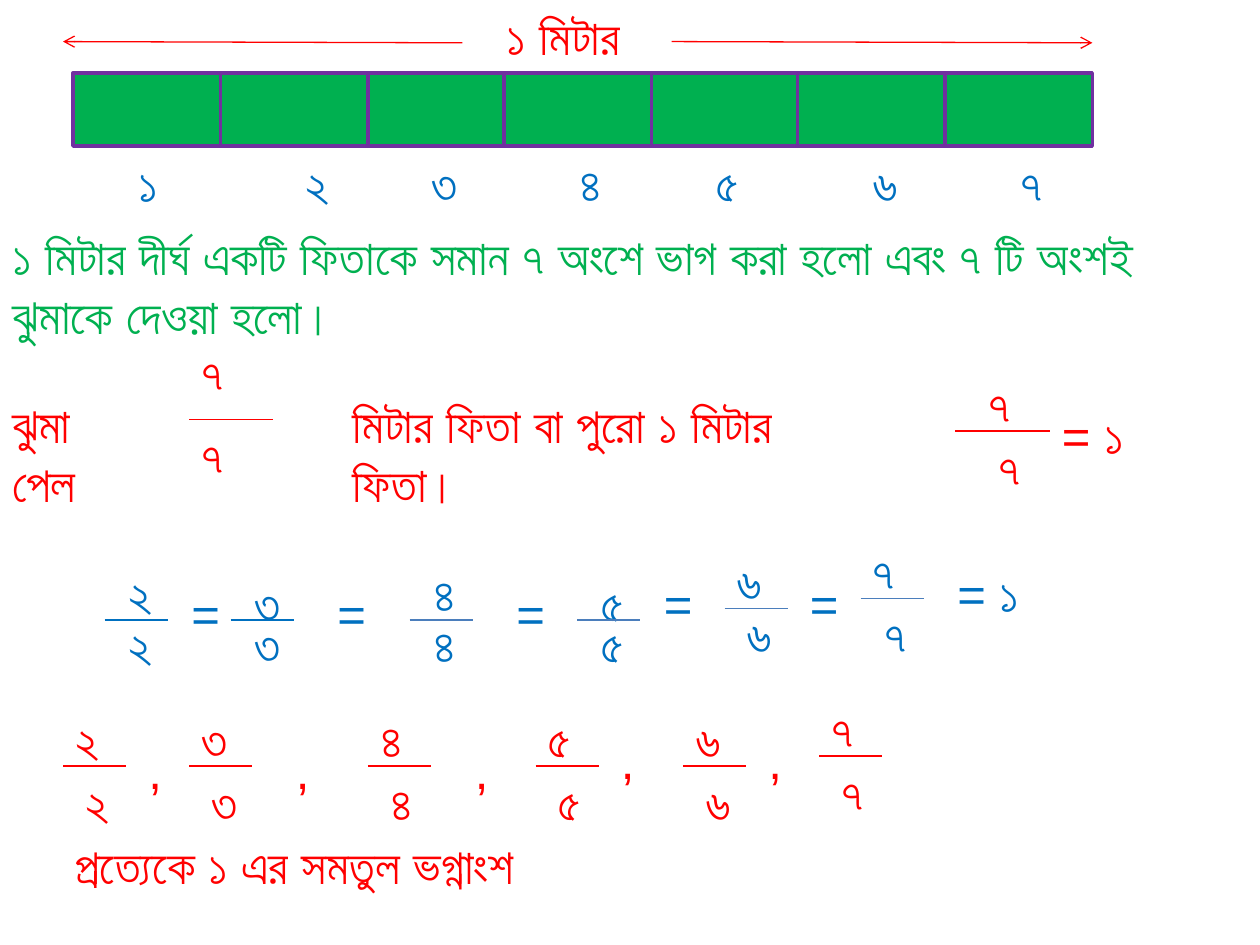
from dataclasses import dataclass
from typing import Optional

import pptx
import pptx.dml.color
import pptx.enum.shapes
import pptx.enum.text
import pptx.oxml
import pptx.oxml.ns
import pptx.util
from pptx.shapes.shapetree import GroupShapes
from pptx.util import Inches


@dataclass(frozen=True)
class Theme:
    font: str = "Arial"
    size: float = 28
    thin: float = 0.75
    outline: float = 2
    red: str = "FF0000"
    blue: str = "0070C0"
    soft_blue: str = "4B7EBC"
    green: str = "00B050"
    purple: str = "7030A0"


THEME = Theme()
LINE_HEIGHT = 0.57
DIGIT_WIDTHS = {"১": 0.36, "২": 0.38, "৩": 0.41, "৪": 0.36, "৫": 0.39, "৬": 0.41, "৭": 0.37}


@dataclass(frozen=True)
class Label:
    text: str
    left: float
    top: float
    width: float


@dataclass(frozen=True)
class Fraction:
    """A digit over itself; both digits are placed relative to the bar's left end."""
    digit: str
    left: float
    bar_y: float
    color: str = THEME.red
    bar_color: Optional[str] = None
    length: float = 0.5
    top_shift: float = 0
    bottom_shift: float = 0.08
    rise: float = 0.5
    drop: float = 0


def rgb(color: str) -> pptx.dml.color.RGBColor:
    return pptx.dml.color.RGBColor.from_string(color)


def add_text(shapes, text: str, left: float, top: float, width: float, *,
             color: str, height: float = LINE_HEIGHT, wrap: bool = False) -> None:
    box = shapes.add_textbox(Inches(left), Inches(top), Inches(width), Inches(height))
    frame = box.text_frame
    frame.text = text
    frame.word_wrap = wrap
    frame.auto_size = pptx.enum.text.MSO_AUTO_SIZE.SHAPE_TO_FIT_TEXT
    for paragraph in frame.paragraphs:
        for run in paragraph.runs:
            run.font.size = pptx.util.Pt(THEME.size)
            run.font.name = THEME.font
            run.font.color.rgb = rgb(color)
            script_font = pptx.oxml.parse_xml(
                f'<a:cs {pptx.oxml.ns.nsdecls("a")} typeface="{THEME.font}"/>')
            run.font._element.append(script_font)


def add_digit(shapes: GroupShapes, digit: str, left: float, top: float, color: str) -> None:
    add_text(shapes, digit, left, top, DIGIT_WIDTHS[digit], color=color)


def add_line(shapes: GroupShapes, start: tuple[float, float], end: tuple[float, float],
             color: str, arrow: bool = False) -> None:
    line = shapes.add_connector(pptx.enum.shapes.MSO_CONNECTOR.STRAIGHT,
                                *(Inches(value) for value in (*start, *end)))
    line.line.color.rgb = rgb(color)
    line.line.width = pptx.util.Pt(THEME.thin)
    namespace = pptx.oxml.ns.nsdecls("a")
    if arrow:
        line.line._get_or_add_ln().append(
            pptx.oxml.parse_xml(f'<a:tailEnd {namespace} type="arrow"/>'))
    line._element.spPr.append(pptx.oxml.parse_xml(f"<a:effectLst {namespace}/>"))


def add_segment(shapes: GroupShapes, left: float) -> None:
    segment = shapes.add_shape(pptx.enum.shapes.MSO_SHAPE.RECTANGLE,
                               Inches(left), Inches(0.58), Inches(1.17), Inches(0.58))
    segment.shadow.inherit = False
    segment.fill.solid()
    segment.fill.fore_color.rgb = rgb(THEME.green)
    segment.line.color.rgb = rgb(THEME.purple)
    segment.line.width = pptx.util.Pt(THEME.outline)


def add_fraction(shapes: GroupShapes, fraction: Fraction) -> None:
    left, bar_y, color = fraction.left, fraction.bar_y, fraction.color
    add_digit(shapes, fraction.digit, left + fraction.top_shift, bar_y - fraction.rise, color)
    add_digit(shapes, fraction.digit, left + fraction.bottom_shift, bar_y + fraction.drop, color)
    add_line(shapes, (left, bar_y), (left + fraction.length, bar_y), fraction.bar_color or color)


def add_labels(shapes: GroupShapes, labels: list[Label], color: str) -> None:
    for label in labels:
        add_text(shapes, label.text, label.left, label.top, label.width, color=color)


def add_ribbon(shapes: GroupShapes) -> None:
    for left in (0.58, 1.75, 2.92, 5.17, 4, 6.33, 7.5):
        add_segment(shapes, left)
    add_text(shapes, "১ মিটার", 3.92, 0, 1.18, color=THEME.red)
    add_line(shapes, (5.33, 0.33), (8.67, 0.34), THEME.red, arrow=True)
    add_line(shapes, (3.67, 0.34), (0.5, 0.33), THEME.red, arrow=True)
    for digit, left in zip(DIGIT_WIDTHS, (1, 2.33, 3.33, 4.5, 5.58, 6.83, 8)):
        add_digit(shapes, digit, left, 1.17, THEME.blue)


def add_share(shapes: GroupShapes) -> None:
    add_labels(shapes, [Label("ঝুমা পেল", 0, 3.08, 1.26),
                        Label("মিটার ফিতা বা পুরো ১ মিটার ফিতা।", 2.7, 3.08, 4.34)], THEME.red)
    add_fraction(shapes, Fraction("৭", 1.5, 3.33, length=0.67, bottom_shift=0, rise=0.66))


def add_whole(shapes: GroupShapes) -> None:
    add_fraction(shapes, Fraction("৭", 7.58, 3.42, length=0.75,
                                  top_shift=0.17, bottom_shift=0.25))
    add_labels(shapes, [Label("= ১", 8.33, 3.17, 0.7)], THEME.red)


def add_equalities(shapes: GroupShapes) -> None:
    blue, soft = THEME.blue, THEME.soft_blue
    close = {"color": blue, "top_shift": 0.09, "bottom_shift": 0.09, "drop": -0.09}
    for fraction in (
        Fraction("২", 0.83, 4.92, **close),
        Fraction("৩", 1.83, 4.92, rise=0.42, **close),
        Fraction("৪", 3.25, 4.92, bar_color=soft, **close),
        Fraction("৫", 4.58, 4.92, bar_color=soft, rise=0.42, **close),
        Fraction("৬", 5.75, 4.83, color=blue, bar_color=soft, drop=-0.08),
        Fraction("৭", 6.83, 4.75, color=blue, bar_color=soft, bottom_shift=0.09),
    ):
        add_fraction(shapes, fraction)
    equals = [Label("=", left, top, 0.45) for left, top in
              ((1.42, 4.58), (2.58, 4.58), (4, 4.58), (5.17, 4.5), (6.33, 4.5))]
    add_labels(shapes, [*equals, Label("= ১", 7.5, 4.42, 0.7)], blue)


def add_equivalents(shapes: GroupShapes) -> None:
    for digit, left in zip("২৩৪৫৬৭", (0.5, 1.5, 2.92, 4.25, 5.42, 6.5)):
        add_fraction(shapes, Fraction(digit, left, 6 if digit == "৭" else 6.08))
    commas = [Label(",", left, top, 0.28) for left, top in
              ((1.08, 5.83), (2.25, 5.83), (3.67, 5.83), (4.83, 5.75), (6, 5.75))]
    conclusion = Label("প্রত্যেকে ১ এর সমতুল ভগ্নাংশ", 0.5, 6.58, 3.76)
    add_labels(shapes, [*commas, conclusion], THEME.red)


def main() -> None:
    presentation = pptx.Presentation()
    presentation.slide_width = Inches(10)
    presentation.slide_height = Inches(7.5)
    slide = presentation.slides.add_slide(presentation.slide_layouts[6])

    add_ribbon(slide.shapes.add_group_shape().shapes)
    add_text(slide.shapes,
             "১ মিটার দীর্ঘ একটি ফিতাকে সমান ৭ অংশে ভাগ করা হলো এবং ৭ টি অংশই\n"
             "ঝুমাকে দেওয়া হলো।",
             0, 1.75, 9.41, height=1.04, color=THEME.green)
    for add_part in (add_share, add_whole, add_equalities, add_equivalents):
        add_part(slide.shapes.add_group_shape().shapes)

    presentation.save("out.pptx")


if __name__ == "__main__":
    main()
